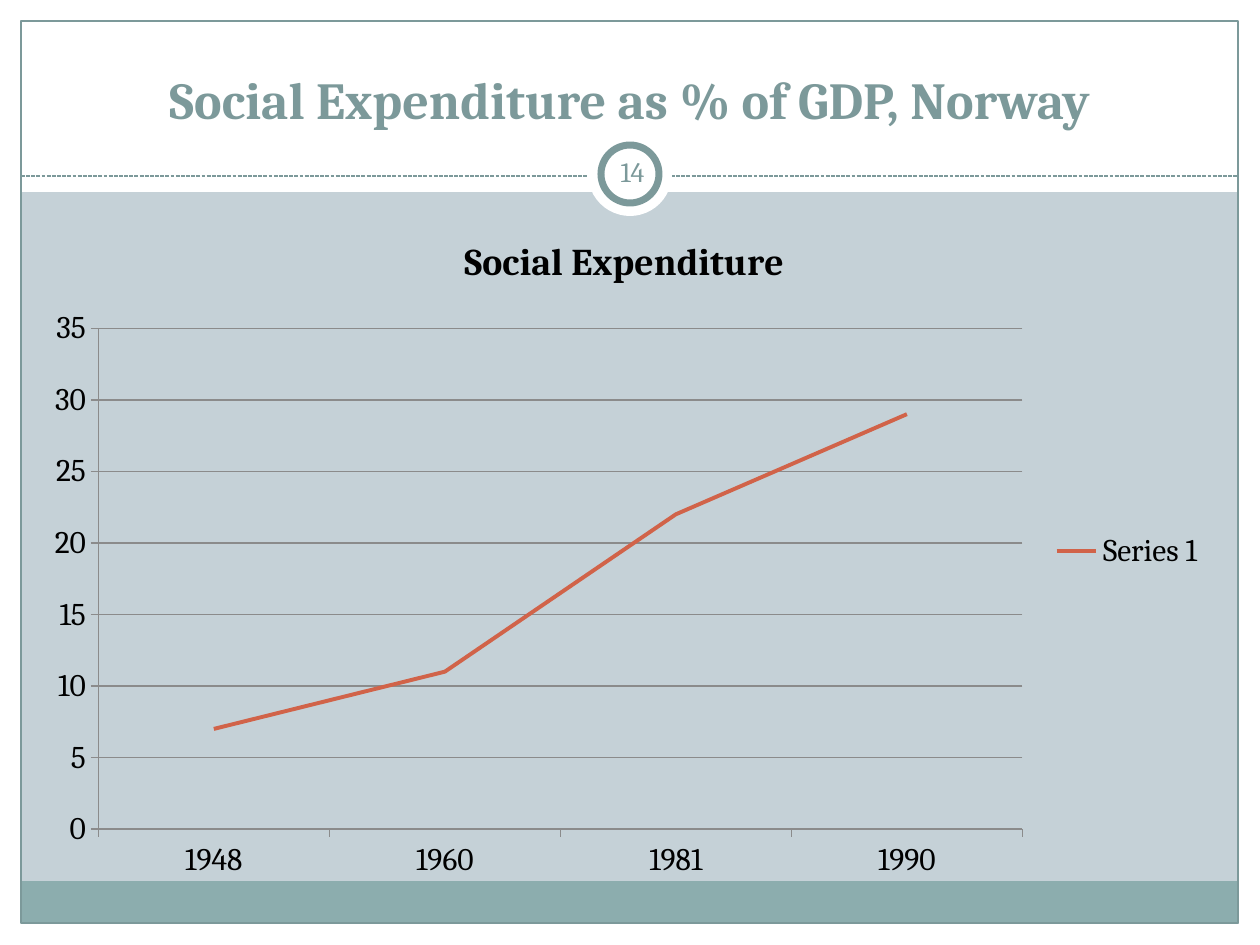
from lxml.etree import SubElement
from pptx import Presentation
from pptx.chart.data import CategoryChartData
from pptx.dml.color import RGBColor
from pptx.enum.chart import XL_CHART_TYPE, XL_LEGEND_POSITION, XL_MARKER_STYLE, XL_TICK_MARK
from pptx.enum.dml import MSO_LINE
from pptx.enum.shapes import MSO_CONNECTOR, MSO_SHAPE
from pptx.enum.text import MSO_ANCHOR, PP_ALIGN
from pptx.oxml.ns import qn
from pptx.util import Pt

PX = 914400 / 126
FONT = "Cambria"
WHITE = RGBColor(0xFF, 0xFF, 0xFF)
BLACK = RGBColor(0, 0, 0)
MIST = RGBColor(0xC5, 0xD1, 0xD7)
TEAL = RGBColor(0x8C, 0xAD, 0xAE)
SLATE = RGBColor(0x7C, 0x99, 0x9A)
GREY = RGBColor(0x8B, 0x8B, 0x8B)
ORANGE = RGBColor(0xD1, 0x63, 0x49)


def emu(*lengths):
    return [round(length * PX) for length in lengths]


def add_text(box, wording, size, bold, anchor):
    frame = box.text_frame
    frame.text = wording
    frame.word_wrap = True
    frame.vertical_anchor = anchor
    frame.margin_left = frame.margin_right = Pt(3.6)
    frame.margin_top = frame.margin_bottom = Pt(3.6)
    paragraph = frame.paragraphs[0]
    paragraph.alignment = PP_ALIGN.CENTER
    font = paragraph.runs[0].font
    font.name, font.size, font.bold = FONT, Pt(size), bold
    font.color.rgb = SLATE


deck = Presentation()
deck.slide_width, deck.slide_height = emu(1260, 945)
slide = deck.slides.add_slide(deck.slide_layouts[6])
slide.background.fill.solid()
slide.background.fill.fore_color.rgb = MIST
shapes = slide.shapes

backdrop = [
    (MSO_SHAPE.RECTANGLE, (0, 924, 1260, 21), WHITE, None),
    (MSO_SHAPE.RECTANGLE, (0, 0, 1260, 192), WHITE, None),
    (MSO_SHAPE.RECTANGLE, (0, 0, 21, 945), WHITE, None),
    (MSO_SHAPE.RECTANGLE, (1239, 0, 21, 945), WHITE, None),
    (MSO_SHAPE.RECTANGLE, (21, 881, 1217, 43), TEAL, None),
    (MSO_SHAPE.RECTANGLE, (21, 21, 1217, 902), None, 0.75),
    (MSO_CONNECTOR.STRAIGHT, (21, 176, 1239, 176), None, 0.75),
    (MSO_SHAPE.OVAL, (588, 132, 84, 84), WHITE, None),
    (MSO_SHAPE.OVAL, (601, 145, 58, 58), WHITE, 4),
]
for kind, place, fill, line_width in backdrop:
    if kind is MSO_CONNECTOR.STRAIGHT:
        part = shapes.add_connector(kind, *emu(*place))
        part.line.dash_style = MSO_LINE.SQUARE_DOT
    else:
        part = shapes.add_shape(kind, *emu(*place))
        part.shadow.inherit = False
        if fill is None:
            part.fill.background()
        else:
            part.fill.solid()
            part.fill.fore_color.rgb = fill
    if line_width is None:
        part.line.fill.background()
    else:
        part.line.color.rgb = SLATE
        part.line.width = Pt(line_width)
    if kind is MSO_CONNECTOR.STRAIGHT:
        SubElement(part._element.spPr, qn("a:effectLst"))

heading = shapes.add_textbox(*emu(42, 32, 1176, 104))
add_text(heading, "Social Expenditure as % of GDP, Norway", 29.7, True, MSO_ANCHOR.BOTTOM)
page_number = shapes.add_textbox(*emu(601, 141, 63, 61))
add_text(page_number, "14", 16, False, MSO_ANCHOR.MIDDLE)

spending = CategoryChartData()
spending.categories = ["1948", "1960", "1981", "1990"]
spending.add_series("Series 1", [7, 11, 22, 29])
chart = shapes.add_chart(XL_CHART_TYPE.LINE, *emu(31, 210, 1187, 682), spending).chart
chart.font.name, chart.font.size = FONT, Pt(18)
chart.font.color.rgb = BLACK

chart.has_title = True
chart.chart_title.include_in_layout = False
chart.chart_title.text_frame.text = "Social Expenditure"
title_font = chart.chart_title.text_frame.paragraphs[0].runs[0].font
title_font.name, title_font.size, title_font.bold = FONT, Pt(21.6), True
title_font.color.rgb = BLACK

chart.has_legend = True
chart.legend.position = XL_LEGEND_POSITION.RIGHT
chart.legend.include_in_layout = False

years, percent = chart.category_axis, chart.value_axis
percent.minimum_scale, percent.maximum_scale, percent.major_unit = 0, 35, 5
percent.has_major_gridlines = True
for axis in (years, percent):
    axis.major_tick_mark = XL_TICK_MARK.OUTSIDE
    axis.minor_tick_mark = XL_TICK_MARK.NONE
for rule in (years.format.line, percent.format.line, percent.major_gridlines.format.line):
    rule.color.rgb = GREY
    rule.width = Pt(0.75)

chart.plots[0].vary_by_categories = False
expenditure = chart.plots[0].series[0]
expenditure.smooth = False
expenditure.marker.style = XL_MARKER_STYLE.NONE
expenditure.format.line.color.rgb = ORANGE
expenditure.format.line.width = Pt(2.25)

deck.save("out.pptx")
